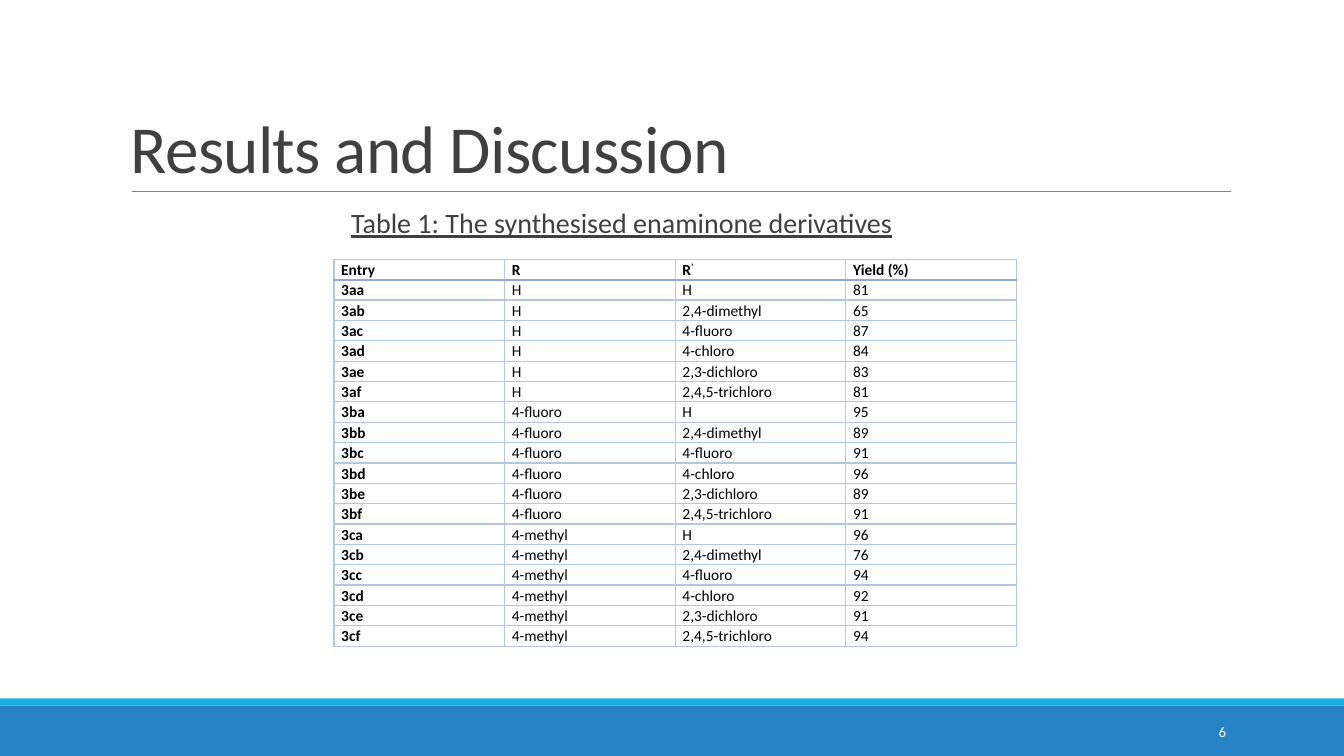
"""Build the results slide with the table of enaminone derivatives."""
from dataclasses import dataclass
from itertools import product

from pptx import Presentation
from pptx.dml.color import RGBColor
from pptx.enum.shapes import MSO_CONNECTOR, MSO_SHAPE
from pptx.enum.text import MSO_ANCHOR, MSO_AUTO_SIZE, PP_ALIGN
from pptx.oxml import parse_xml
from pptx.oxml.ns import nsdecls
from pptx.util import Pt

PX = 9525
FONT = "Calibri"
COLOURS = {
    "bar": "2683C6",
    "strip": "1CADE4",
    "rule": "808080",
    "heading": "404040",
    "cell": "000000",
    "page": "FFFFFF",
    "grid": "B4C6E7",
    "header_rule": "8EAADB",
}
HEADER = ("Entry", "R", "R’", "Yield (%)")
R_GROUPS = {"a": "H", "b": "4-fluoro", "c": "4-methyl"}
R_PRIME_GROUPS = {
    "a": "H",
    "b": "2,4-dimethyl",
    "c": "4-fluoro",
    "d": "4-chloro",
    "e": "2,3-dichloro",
    "f": "2,4,5-trichloro",
}
YIELDS = (81, 65, 87, 84, 83, 81, 95, 89, 91, 96, 89, 91, 96, 76, 94, 92, 91, 94)


@dataclass(frozen=True)
class Box:
    left: int
    top: int
    width: int
    height: int

    def emu(self) -> tuple[int, int, int, int]:
        return self.left * PX, self.top * PX, self.width * PX, self.height * PX


@dataclass(frozen=True)
class Band:
    box: Box
    colour: str


@dataclass(frozen=True)
class Label:
    text: str
    box: Box
    size: float
    colour: str
    align: PP_ALIGN = PP_ALIGN.LEFT
    anchor: MSO_ANCHOR = MSO_ANCHOR.TOP
    line_spacing: float = 1.0
    underline: bool = False
    margin_left: int = 0
    tracking: int = 0


BANDS = (
    Band(Box(0, 672, 1280, 48), "bar"),
    Band(Box(0, 665, 1280, 7), "strip"),
)
TITLE = Label("Results and Discussion", Box(115, 30, 1056, 153), 48, "heading",
              anchor=MSO_ANCHOR.BOTTOM, line_spacing=0.85, tracking=-50)
CAPTION = Label("Table 1: The synthesised enaminone derivatives", Box(315, 195, 707, 38),
                20, "heading", line_spacing=0.9, underline=True, margin_left=10)
PAGE = Label("6", Box(1040, 678, 137, 38), 10.5, "page",
             align=PP_ALIGN.RIGHT, anchor=MSO_ANCHOR.MIDDLE)
TABLE = Box(318, 247, 650, 356)


def rgb(name: str) -> RGBColor:
    return RGBColor.from_string(COLOURS[name])


def style_font(font, size: float, colour: str) -> None:
    font.name = FONT
    font.size = Pt(size)
    font.color.rgb = rgb(colour)


def fill_label(shape, label: Label) -> None:
    shape.left, shape.top, shape.width, shape.height = label.box.emu()
    frame = shape.text_frame
    frame.text = label.text
    frame.word_wrap = True
    frame.auto_size = MSO_AUTO_SIZE.NONE
    frame.vertical_anchor = label.anchor
    paragraph = frame.paragraphs[0]
    paragraph.alignment = label.align
    paragraph.line_spacing = label.line_spacing
    if label.margin_left:
        paragraph._p.get_or_add_pPr().set("marL", str(label.margin_left * PX))
    run = paragraph.runs[0]
    style_font(run.font, label.size, label.colour)
    run.font.underline = label.underline
    if label.tracking:
        run._r.get_or_add_rPr().set("spc", str(label.tracking))


def add_band(slide, band: Band) -> None:
    shape = slide.shapes.add_shape(MSO_SHAPE.RECTANGLE, *band.box.emu())
    shape.shadow.inherit = False
    shape.fill.solid()
    shape.fill.fore_color.rgb = rgb(band.colour)
    shape.line.fill.background()


def add_title_rule(slide) -> None:
    rule = slide.shapes.add_connector(
        MSO_CONNECTOR.STRAIGHT, 126 * PX, 182 * PX, 1172 * PX, 182 * PX)
    rule.line.color.rgb = rgb("rule")
    rule.line.width = Pt(0.5)
    rule._element.spPr.append(parse_xml(f"<a:effectLst {nsdecls('a')}/>"))


def set_borders(cell, row: int) -> None:
    header_side = {0: "lnB", 1: "lnT"}.get(row)
    for position, side in enumerate(("lnL", "lnR", "lnT", "lnB")):
        heavy = side == header_side
        colour = COLOURS["header_rule" if heavy else "grid"]
        width = Pt(1.5 if heavy else 1)
        cell._tc.get_or_add_tcPr().insert(position, parse_xml(
            f'<a:{side} {nsdecls("a")} w="{width}"><a:solidFill>'
            f'<a:srgbClr val="{colour}"/></a:solidFill></a:{side}>'))


def fill_cell(cell, text: str, row: int, column: int) -> None:
    cell.fill.background()
    cell.margin_left = cell.margin_right = 7 * PX
    cell.margin_top = cell.margin_bottom = 0
    paragraph = cell.text_frame.paragraphs[0]
    paragraph.line_spacing = 1.07
    paragraph.space_after = Pt(8)
    base, prime, _ = text.partition("’")
    for part in filter(None, (base, prime)):
        run = paragraph.add_run()
        run.text = part
        style_font(run.font, 11, "cell")
        run.font.bold = row == 0 or column == 0
        if part == prime:
            run._r.get_or_add_rPr().set("baseline", "30000")
    set_borders(cell, row)


def add_yield_table(slide) -> None:
    pairs = product(R_GROUPS.items(), R_PRIME_GROUPS.items())
    entries = [
        (f"3{r_key}{prime_key}", r_group, prime_group, str(percent))
        for ((r_key, r_group), (prime_key, prime_group)), percent in zip(pairs, YIELDS)
    ]
    rows = [HEADER, *entries]
    table = slide.shapes.add_table(len(rows), len(HEADER), *TABLE.emu()).table
    table.first_row = table.horz_banding = False
    for row, texts in enumerate(rows):
        for column, text in enumerate(texts):
            fill_cell(table.cell(row, column), text, row, column)


def main() -> None:
    presentation = Presentation()
    presentation.slide_width = 1280 * PX
    presentation.slide_height = 720 * PX
    slide = presentation.slides.add_slide(presentation.slide_layouts[5])
    for band in BANDS:
        add_band(slide, band)
    add_title_rule(slide)
    fill_label(slide.shapes.title, TITLE)
    add_yield_table(slide)
    for label in (PAGE, CAPTION):
        fill_label(slide.shapes.add_textbox(*label.box.emu()), label)
    presentation.save("out.pptx")


if __name__ == "__main__":
    main()
